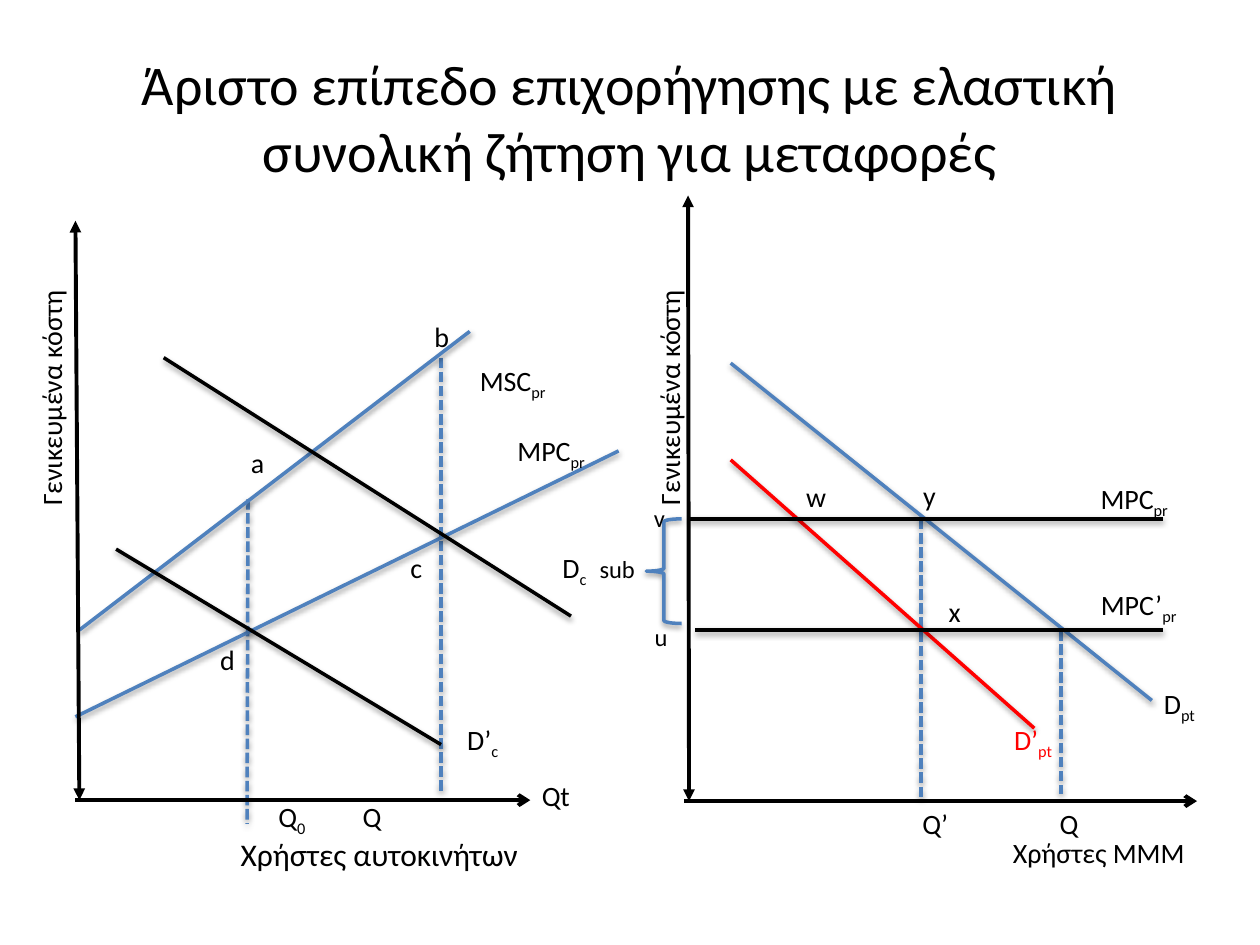
from lxml.etree import SubElement
from pptx import Presentation
from pptx.dml.color import RGBColor
from pptx.enum.dml import MSO_LINE
from pptx.enum.shapes import MSO_CONNECTOR, MSO_SHAPE
from pptx.enum.text import MSO_ANCHOR, MSO_AUTO_SIZE as AutoSize, PP_ALIGN as Align
from pptx.oxml.ns import qn
from pptx.util import Cm, Pt

COLORS = {"ink": "000000", "blue": "4F81BD", "red": "FF0000"}
LABEL_HEIGHT = {14: 0.86, 16: 0.94, 18: 1.02}


def color(name):
    return RGBColor.from_string(COLORS[name])


class Diagram:
    font_name = "Calibri"

    def __init__(self, slide):
        self.slide = slide
        self.canvas = slide.shapes

    def start_panel(self):
        self.canvas = self.slide.shapes.add_group_shape().shapes

    def end_panel(self):
        self.canvas = self.slide.shapes

    def set_text(self, paragraph, text, size, ink, align):
        """Fill a paragraph; the part after an underscore is a subscript."""
        paragraph.alignment = align
        paragraph.font.name = self.font_name
        paragraph.font.size = Pt(size)
        paragraph.font.color.rgb = color(ink)
        base, _, subscript = text.partition("_")
        paragraph.add_run().text = base
        if subscript:
            run = paragraph.add_run()
            run.text = subscript
            run.font._element.set("baseline", "-25000")

    def title(self, text):
        box = self.canvas.add_textbox(Cm(1.27), Cm(0.76), Cm(22.86), Cm(3.18))
        frame = box.text_frame
        frame.word_wrap = True
        frame.vertical_anchor = MSO_ANCHOR.MIDDLE
        self.set_text(frame.paragraphs[0], text, 32, "ink", Align.CENTER)

    def label(self, text, left, top, width, size=16, ink="ink",
              align=Align.CENTER, rotation=0):
        box = self.canvas.add_textbox(Cm(left), Cm(top), Cm(width), Cm(LABEL_HEIGHT[size]))
        box.rotation = rotation
        frame = box.text_frame
        frame.word_wrap = True
        frame.auto_size = AutoSize.SHAPE_TO_FIT_TEXT
        self.set_text(frame.paragraphs[0], text, size, ink, align)

    def stroke(self, shape, ink, width=2):
        shape.line.color.rgb = color(ink)
        shape.line.width = Pt(width)

    def effects(self, shape, shadow):
        effect_list = SubElement(shape._element.spPr, qn("a:effectLst"))
        if shadow:
            outer = SubElement(effect_list, qn("a:outerShdw"), blurRad="40000",
                               dist="20000", dir="5400000", rotWithShape="0")
            black = SubElement(outer, qn("a:srgbClr"), val=COLORS["ink"])
            SubElement(black, qn("a:alpha"), val="38000")

    def connect(self, x1, y1, x2, y2):
        return self.canvas.add_connector(MSO_CONNECTOR.STRAIGHT, Cm(x1), Cm(y1), Cm(x2), Cm(y2))

    def curve(self, ink, *ends, dashed=False):
        line = self.connect(*ends)
        self.stroke(line, ink)
        if dashed:
            line.line.dash_style = MSO_LINE.SQUARE_DOT
        self.effects(line, shadow=True)

    def axis(self, *ends, tail, head=None):
        line = self.connect(*ends)
        self.stroke(line, "ink", 2.25)
        for tag, kind in (("a:headEnd", head), ("a:tailEnd", tail)):
            if kind:
                SubElement(line.line._get_or_add_ln(), qn(tag), type=kind)
        self.effects(line, shadow=False)

    def brace(self, left, top, width, height):
        brace = self.canvas.add_shape(MSO_SHAPE.LEFT_BRACE, Cm(left), Cm(top),
                                      Cm(width), Cm(height))
        brace.fill.background()
        self.stroke(brace, "blue")
        self.effects(brace, shadow=True)


def draw_car_users(diagram):
    diagram.start_panel()
    # Cost curves, demand curves and drop lines
    diagram.curve("blue", 5, 10.06, 4.98, 16.61, dashed=True)
    diagram.curve("blue", 8.89, 7.21, 8.89, 16, dashed=True)
    diagram.curve("blue", 1.6, 12.7, 9.47, 6.68)
    diagram.curve("blue", 1.52, 14.45, 12.47, 9.09)
    diagram.curve("ink", 3.3, 7.21, 11.51, 12.42)
    diagram.curve("ink", 2.34, 11.07, 8.89, 15.01)
    # Axis names
    diagram.label("Γενικευμένα κόστη", -2.18, 8.36, 6.43, align=Align.RIGHT, rotation=270)
    diagram.label("Χρήστες αυτοκινήτων", 3.96, 16.71, 6.73, size=18, align=Align.RIGHT)
    # Points, curves and quantities
    for text, left, top, width in (
        ("a", 4.75, 8.86, 0.89), ("b", 8.46, 6.32, 0.89),
        ("c", 8, 10.97, 0.79), ("d", 4.19, 12.83, 0.79),
        ("MSC_pr", 9.09, 7.21, 2.49), ("MPC_pr", 9.88, 8.61, 2.46),
        ("D_c", 10.69, 10.97, 1.78), ("D’_c", 8.97, 14.45, 1.52),
        ("Q_0", 5.21, 16, 1.35), ("Q", 7.06, 16, 0.64), ("Qt", 10.52, 15.57, 1.37),
    ):
        diagram.label(text, left, top, width)


def draw_transit_users(diagram):
    diagram.start_panel()
    # Drop lines, demand curves and cost levels
    diagram.curve("blue", 18.57, 10.46, 18.57, 16.13, dashed=True)
    diagram.curve("blue", 21.39, 12.7, 21.39, 16, dashed=True)
    diagram.curve("red", 14.73, 9.27, 20.85, 14.68)
    diagram.curve("blue", 14.73, 7.32, 23.22, 14.12)
    diagram.curve("ink", 13.89, 10.46, 23.44, 10.46)
    diagram.curve("ink", 14.02, 12.7, 23.44, 12.7)
    # Axis names
    diagram.label("Γενικευμένα κόστη", 10.44, 8.18, 6.1, align=Align.RIGHT, rotation=270)
    diagram.label("Χρήστες MMM", 19.48, 16.71, 4.65, align=Align.RIGHT)
    # Points, curves and quantities
    for text, left, top, width in (
        ("w", 16, 9.55, 0.79), ("x", 18.85, 11.86, 0.79), ("y", 17.96, 9.53, 1.55),
        ("MPC_pr", 21.72, 9.58, 2.29), ("MPC’_pr", 21.89, 11.71, 2.13),
        ("D_pt", 22.91, 13.72, 1.73),
        ("Q’", 18.08, 16.13, 1.55), ("Q", 21.11, 16.13, 0.64),
    ):
        diagram.label(text, left, top, width)
    diagram.label("D’_pt", 19.96, 14.45, 1.73, ink="red")
    # Subsidy between the two cost levels
    diagram.brace(13.03, 10.46, 0.71, 2.11)
    diagram.label("v", 12.85, 10.01, 0.89, size=14)
    diagram.label("u", 12.88, 12.42, 0.89, size=14)
    diagram.label("sub", 11.68, 11.05, 1.37, size=14, align=Align.RIGHT)


def main():
    deck = Presentation()
    deck.slide_width, deck.slide_height = Cm(25.4), Cm(19.05)
    diagram = Diagram(deck.slides.add_slide(deck.slide_layouts[6]))
    diagram.title("Άριστο επίπεδο επιχορήγησης με ελαστική συνολική ζήτηση για μεταφορές")
    draw_car_users(diagram)
    draw_transit_users(diagram)
    diagram.end_panel()
    # Axes of both panels
    diagram.axis(1.52, 4.45, 1.6, 16.13, head="triangle", tail="triangle")
    diagram.axis(1.52, 16.13, 10.69, 16.13, tail="arrow")
    diagram.axis(13.87, 3.94, 13.89, 16.15, head="triangle", tail="triangle")
    diagram.axis(13.79, 16.15, 24.13, 16.15, tail="arrow")
    deck.save("out.pptx")


if __name__ == "__main__":
    main()
